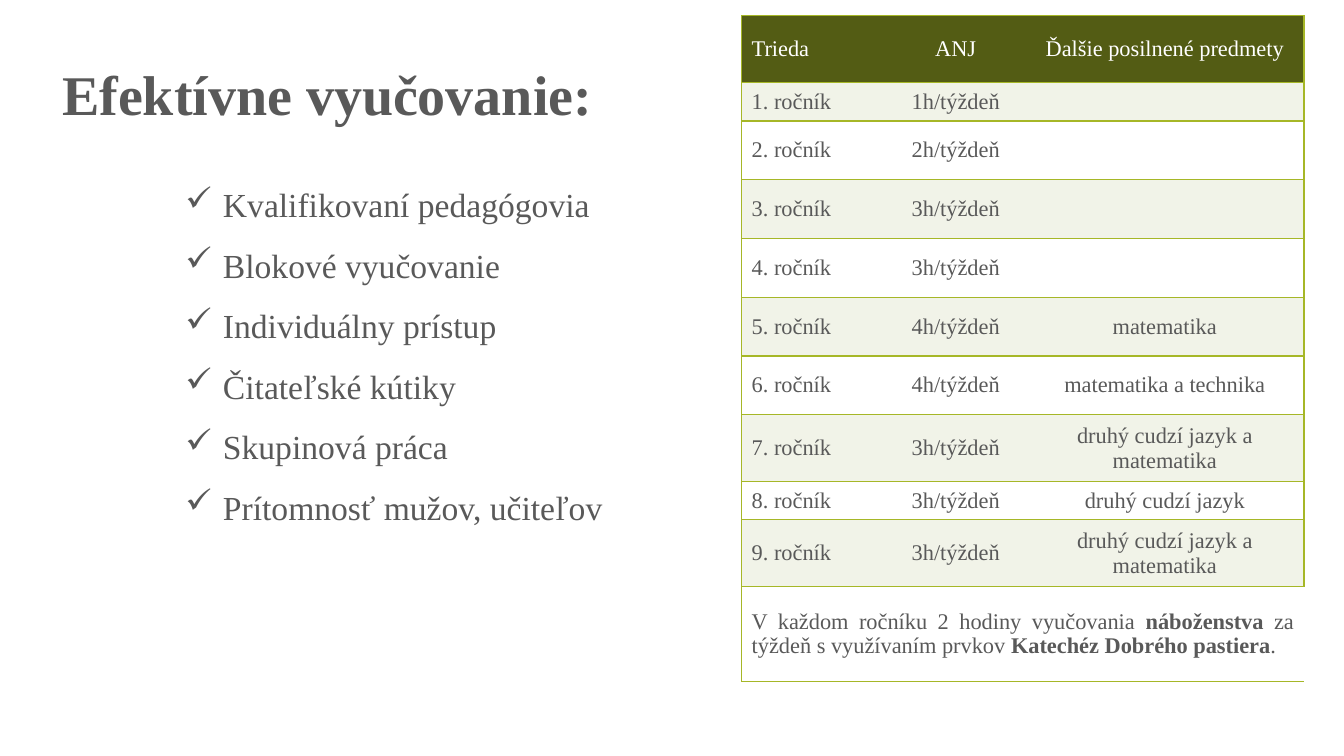
from lxml import etree
from pptx import Presentation
from pptx.dml.color import RGBColor
from pptx.enum.text import MSO_ANCHOR, PP_ALIGN
from pptx.oxml.ns import qn
from pptx.util import Cm, Pt

LEFT, CENTER, JUSTIFY = PP_ALIGN.LEFT, PP_ALIGN.CENTER, PP_ALIGN.JUSTIFY
MIDDLE, BOTTOM = MSO_ANCHOR.MIDDLE, MSO_ANCHOR.BOTTOM
COLORS = {"text": "595959", "header": "535C14", "band": "F1F3E8",
          "white": "FFFFFF", "border": "A6B727"}


def style_font(paragraph, size, color="text", bold=False):
    font = paragraph.font
    font.name, font.size, font.bold = "Times New Roman", Pt(size), bold
    font.color.rgb = RGBColor.from_string(COLORS[color])


def style_cell(cell, fill, first, last):
    cell.vertical_anchor = MIDDLE
    properties = cell._tc.get_or_add_tcPr()
    for side, visible in (("L", first), ("R", last), ("T", True), ("B", True)):
        line = etree.SubElement(properties, qn(f"a:ln{side}"), w="12700")
        if visible:
            solid = etree.SubElement(line, qn("a:solidFill"))
            etree.SubElement(solid, qn("a:srgbClr"), val=COLORS["border"])
        else:
            etree.SubElement(line, qn("a:noFill"))
    cell.fill.solid()
    cell.fill.fore_color.rgb = RGBColor.from_string(COLORS[fill])


deck = Presentation()
deck.slide_width, deck.slide_height = Cm(33.87), Cm(19.05)
page = deck.slides.add_slide(deck.slide_layouts[6])

title = page.shapes.add_textbox(Cm(1.32), Cm(0), Cm(26.04), Cm(3.33)).text_frame
title.word_wrap = True
title.vertical_anchor = BOTTOM
title.text = "Efektívne vyučovanie:"
title.paragraphs[0].line_spacing = 0.9
style_font(title.paragraphs[0], 40, bold=True)

LESSONS = [
    ("Trieda", "ANJ", "Ďalšie posilnené predmety"),
    ("1. ročník", "1h/týždeň", ""),
    ("2. ročník", "2h/týždeň", ""),
    ("3. ročník", "3h/týždeň", ""),
    ("4. ročník", "3h/týždeň", ""),
    ("5. ročník", "4h/týždeň", "matematika"),
    ("6. ročník", "4h/týždeň", "matematika a technika"),
    ("7. ročník", "3h/týždeň", "druhý cudzí jazyk a matematika"),
    ("8. ročník", "3h/týždeň", "druhý cudzí jazyk"),
    ("9. ročník", "3h/týždeň", "druhý cudzí jazyk a matematika"),
]
NOTE = [
    ("V každom ročníku 2 hodiny vyučovania ", False),
    ("náboženstva", True),
    (" za týždeň s využívaním prvkov ", False),
    ("Katechéz Dobrého pastiera", True),
    (".", False),
]
WIDTHS = [3.63, 3.53, 7.01]
HEIGHTS = [1.68, 0.97] + [1.48] * 5 + [1.68, 0.97, 1.68, 2.39]

table = page.shapes.add_table(len(HEIGHTS), len(WIDTHS), Cm(18.69), Cm(0.4),
                              Cm(sum(WIDTHS)), Cm(sum(HEIGHTS))).table
table.first_row = table.horz_banding = False
for column, width in zip(table.columns, WIDTHS):
    column.width = Cm(width)
for row, height in zip(table.rows, HEIGHTS):
    row.height = Cm(height)

for row_index, lesson in enumerate(LESSONS):
    header = row_index == 0
    fill = "header" if header else "band" if row_index % 2 else "white"
    for column_index, words in enumerate(lesson):
        cell = table.cell(row_index, column_index)
        style_cell(cell, fill, column_index == 0, column_index == 2)
        cell.text = words
        paragraph = cell.text_frame.paragraphs[0]
        paragraph.alignment = CENTER if column_index else LEFT
        style_font(paragraph, 16, "white" if header else "text")

last_row = len(LESSONS)
note = table.cell(last_row, 0)
note.merge(table.cell(last_row, 2))
for column_index in range(3):
    style_cell(table.cell(last_row, column_index), "white",
               column_index == 0, column_index == 2)
paragraph = note.text_frame.paragraphs[0]
paragraph.alignment = JUSTIFY
style_font(paragraph, 16)
for words, bold in NOTE:
    span = paragraph.add_run()
    span.text = words
    span.font.bold = bold

STRENGTHS = ["Kvalifikovaní pedagógovia", "Blokové vyučovanie", "Individuálny prístup",
             "Čitateľské kútiky", "Skupinová práca", "Prítomnosť mužov, učiteľov"]
strengths = page.shapes.add_textbox(Cm(4.42), Cm(4.01), Cm(12.8), Cm(10.26)).text_frame
strengths.word_wrap = True
strengths.text = "\n".join(STRENGTHS)
for paragraph in strengths.paragraphs:
    paragraph.line_spacing = 1.5
    properties = paragraph._p.get_or_add_pPr()
    properties.set("marL", str(Cm(0.95)))
    properties.set("indent", str(-Cm(0.95)))
    etree.SubElement(properties, qn("a:buChar"), char="✓")
    style_font(paragraph, 24)

deck.save("out.pptx")
